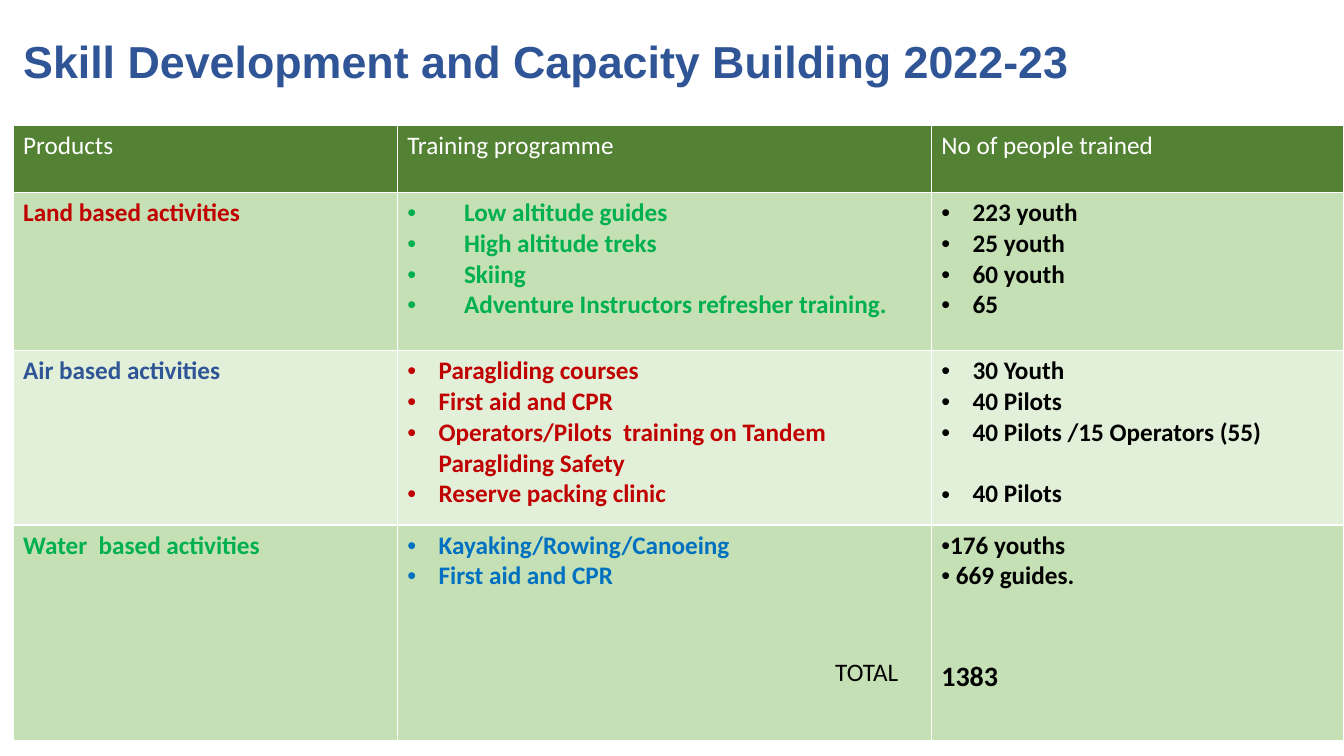
import pptx
import pptx.dml.color
import pptx.enum.text
import pptx.oxml
import pptx.oxml.ns
import pptx.util
from pptx.util import Cm

BLUE, RED, GREEN, SKY = "2F5597", "C00000", "00B050", "0070C0"
BLACK, WHITE = "000000", "FFFFFF"
HEADER, BAND_DARK, BAND_LIGHT = "548235", "C5E0B4", "E2F0D9"
NAMESPACE = pptx.oxml.ns.nsdecls("a")


def color(value):
    return pptx.dml.color.RGBColor.from_string(value)


def write(paragraph, text, text_color, indent=None, space_before=0, **font_values):
    """Write one paragraph; an indent in cm makes it a bullet."""
    paragraph.text = text
    properties = paragraph._p.get_or_add_pPr()
    if indent is not None:
        properties.set("marL", str(Cm(indent)))
        properties.set("indent", str(-Cm(indent)))
        for bullet in ('<a:buFont %s typeface="Arial"/>', '<a:buChar %s char="•"/>'):
            properties.append(pptx.oxml.parse_xml(bullet % NAMESPACE))
    paragraph.space_before = pptx.util.Pt(space_before)
    paragraph.alignment = pptx.enum.text.PP_ALIGN.LEFT
    font = paragraph.runs[0].font
    values = {"name": "Calibri", "size": pptx.util.Pt(18), "bold": False} | font_values
    for name, value in values.items():
        setattr(font, name, value)
    font.color.rgb = color(text_color)


presentation = pptx.Presentation()
presentation.slide_width, presentation.slide_height = Cm(33.87), Cm(19.05)
slide = presentation.slides.add_slide(presentation.slide_layouts[5])

# Title
title = slide.shapes.title
title.left, title.top, title.width, title.height = Cm(0.33), Cm(0.79), Cm(30.5), Cm(1.65)
title.text_frame.auto_size = pptx.enum.text.MSO_AUTO_SIZE.NONE
title.text_frame.vertical_anchor = pptx.enum.text.MSO_ANCHOR.MIDDLE
title_paragraph = title.text_frame.paragraphs[0]
write(title_paragraph, "Skill Development and Capacity Building 2022-23", BLUE,
      name="Arial", size=pptx.util.Pt(32), bold=True)
title_paragraph.line_spacing = 0.9

# Table contents: each cell is (text colour, bullet indent, lines)
rows = [
    (1.7, HEADER, [(WHITE, None, ["Products"]),
                   (WHITE, None, ["Training programme"]),
                   (WHITE, None, ["No of people trained"])]),
    (3.99, BAND_DARK, [
        (RED, None, ["Land based activities"]),
        (GREEN, 1.43, ["Low altitude guides", "High altitude treks", "Skiing",
                       "Adventure Instructors refresher training."]),
        (BLACK, 0.79, ["223 youth", "25 youth", "60 youth", "65"])]),
    (4.39, BAND_LIGHT, [
        (BLUE, None, ["Air based activities"]),
        (RED, 0.79, ["Paragliding courses", "First aid and CPR",
                     "Operators/Pilots  training on Tandem Paragliding Safety",
                     "Reserve packing clinic"]),
        (BLACK, 0.79, ["30 Youth", "40 Pilots", "40 Pilots /15 Operators (55)",
                       "40 Pilots"])]),
    (5.44, BAND_DARK, [
        (GREEN, None, ["Water  based activities"]),
        (SKY, 0.79, ["Kayaking/Rowing/Canoeing", "First aid and CPR"]),
        (BLACK, 0, ["176 youths", " 669 guides."])]),
]
column_widths = [9.68, 13.46, 10.39]

table = slide.shapes.add_table(len(rows), len(column_widths), Cm(0.33), Cm(3.15),
                               Cm(sum(column_widths)), Cm(sum(row[0] for row in rows))).table
for column, width in zip(table.columns, column_widths):
    column.width = Cm(width)

for row_index, (height, fill, cells) in enumerate(rows):
    table.rows[row_index].height = Cm(height)
    for column_index, (text_color, indent, lines) in enumerate(cells):
        cell = table.cell(row_index, column_index)
        for side in "LRTB":
            cell._tc.get_or_add_tcPr().append(pptx.oxml.parse_xml(
                f'<a:ln{side} {NAMESPACE} w="12700"><a:solidFill>'
                f'<a:srgbClr val="{WHITE}"/></a:solidFill></a:ln{side}>'))
        cell.fill.solid()
        cell.fill.fore_color.rgb = color(fill)
        frame = cell.text_frame
        for line_index, line in enumerate(lines):
            paragraph = frame.add_paragraph() if line_index else frame.paragraphs[0]
            write(paragraph, line, text_color, indent, bold=row_index > 0)

# Keep the last pilots figure level with its programme, past the wrapped line
table.cell(2, 2).text_frame.paragraphs[-1].space_before = pptx.util.Pt(22)

# Total
write(table.cell(3, 2).text_frame.add_paragraph(), "1383", BLACK, space_before=49,
      size=pptx.util.Pt(20), bold=True)
total_label = slide.shapes.add_textbox(Cm(20.8), Cm(16.41), Cm(5.11), Cm(1.02))
total_label.text_frame.word_wrap = True
write(total_label.text_frame.paragraphs[0], "TOTAL", BLACK)

presentation.save("out.pptx")
